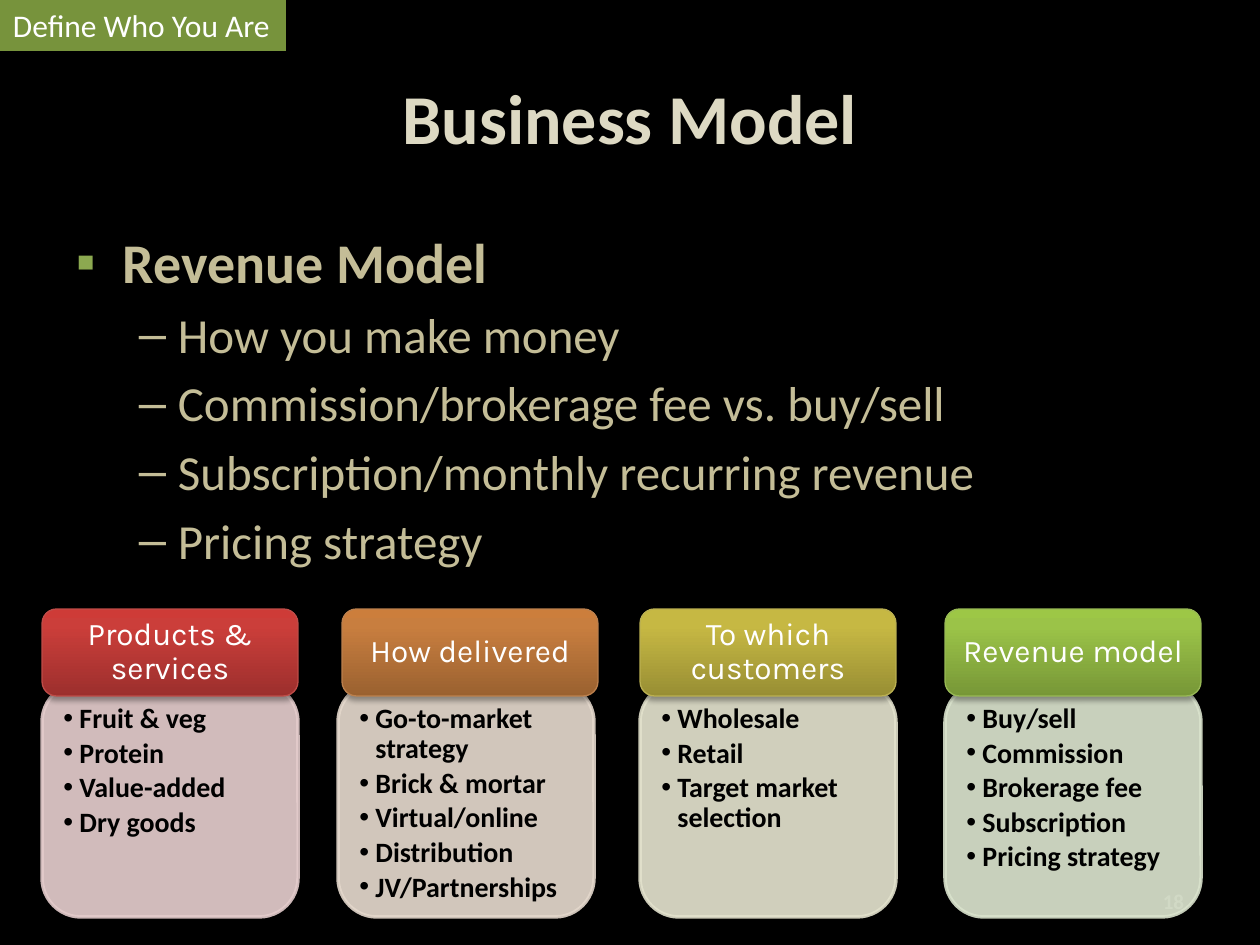
"""Build the Business Model slide with its four summary cards."""
from lxml import etree
from pptx import Presentation
from pptx.dml.color import RGBColor
from pptx.enum.shapes import MSO_SHAPE
from pptx.enum.text import MSO_ANCHOR, PP_ALIGN
from pptx.oxml import parse_xml
from pptx.oxml.ns import nsdecls, qn
from pptx.util import Emu, Pt

ROUNDED, RECTANGLE = MSO_SHAPE.ROUNDED_RECTANGLE, MSO_SHAPE.RECTANGLE
TOP, MIDDLE = MSO_ANCHOR.TOP, MSO_ANCHOR.MIDDLE
LEFT, CENTER, RIGHT = PP_ALIGN.LEFT, PP_ALIGN.CENTER, PP_ALIGN.RIGHT
SCALE = 914400 / 126

COLORS = {
    "background": "000000", "title": "DDD9C3", "body": "C4BD97",
    "bullet": "8CA950", "tag": "77933C", "white": "FFFFFF",
    "black": "000000", "number": "8C8C8C",
}
TAG = "Define Who You Are"
TITLE = "Business Model"
HEADING = "Revenue Model"
POINTS = [
    "How you make money",
    "Commission/brokerage fee vs. buy/sell",
    "Subscription/monthly recurring revenue",
    "Pricing strategy",
]
NUMBER = "18"
CARDS = [
    {"header": "Products & services", "header_x": 42, "panel_x": 42,
     "items": ["Fruit & veg", "Protein", "Value-added", "Dry goods"],
     "gradient": ("9C2F2D", "CB3E3A", "CE3B37"), "edge": "BF4C48",
     "panel": "E8D0D0", "panel_edge": "E3CBCB"},
    {"header": "How delivered", "header_x": 342, "panel_x": 338,
     "items": ["Go-to-market strategy", "Brick & mortar", "Virtual/online",
               "Distribution", "JV/Partnerships"],
     "gradient": ("9A6130", "C87E3F", "CC7E3C"), "edge": "BC804D",
     "panel": "E8DCD0", "panel_edge": "E3D7CB"},
    {"header": "To which customers", "header_x": 640, "panel_x": 640,
     "items": ["Wholesale", "Retail", "Target market selection"],
     "gradient": ("988E34", "C6B843", "C9BB41"), "edge": "BBB051",
     "panel": "E7E6D1", "panel_edge": "E2E1CC"},
    {"header": "Revenue model", "header_x": 945, "panel_x": 945,
     "items": ["Buy/sell", "Commission", "Brokerage fee", "Subscription",
               "Pricing strategy"],
     "gradient": ("779737", "9BC348", "9DC746"), "edge": "98B955",
     "panel": "DEE7D1", "panel_edge": "D9E2CC"},
]
CARD_WIDTH = 256
HEADER_TOP, HEADER_HEIGHT = 609, 87
PANEL_TOP, PANEL_HEIGHT = 683, 234

TITLE_FONT = {"name": "Calibri", "size": Pt(40), "bold": True}
HEADING_FONT = {"name": "Calibri", "size": Pt(32), "bold": True}
POINT_FONT = {"name": "Calibri", "size": Pt(28), "bold": False}
TAG_FONT = {"name": "Calibri", "size": Pt(18)}
NUMBER_FONT = {"name": "Calibri", "size": Pt(12), "bold": True}
HEADER_FONT = {"name": "Karla", "size": Pt(18)}
ITEM_FONT = {"name": "Calibri", "size": Pt(16), "bold": True}
ITEM_SPACING = {"line_spacing": 0.9, "space_after": Pt(2.5)}


def px(value):
    return Emu(round(value * SCALE))


def apply(target, values):
    for name, value in values.items():
        setattr(target, name, value)


def set_frame(shape, anchor=TOP, margins=(13, 6, 13, 6), wrap=True):
    sides = ("margin_left", "margin_top", "margin_right", "margin_bottom")
    apply(shape.text_frame, dict(zip(sides, map(px, margins))))
    apply(shape.text_frame, {"vertical_anchor": anchor, "word_wrap": wrap})


def write(paragraph, text, font, color, **layout):
    run = paragraph.add_run()
    run.text = text
    apply(run.font, font)
    run.font.color.rgb = RGBColor.from_string(color)
    apply(paragraph, {"alignment": LEFT, **layout})


def add_bullet(paragraph, symbol, margin, hanging, color=None):
    properties = paragraph._p.get_or_add_pPr()
    properties.set("marL", str(px(margin)))
    properties.set("indent", str(-px(hanging)))
    if color:
        holder = etree.SubElement(properties, qn("a:buClr"))
        etree.SubElement(holder, qn("a:srgbClr"), val=color)
    etree.SubElement(properties, qn("a:buFont"), typeface="Arial")
    etree.SubElement(properties, qn("a:buChar"), char=symbol)


def add_text_box(slide, box, text, font, color, alignment, anchor=MIDDLE):
    shape = slide.shapes.add_textbox(*map(px, box))
    set_frame(shape, anchor)
    write(shape.text_frame.paragraphs[0], text, font, color,
          alignment=alignment)
    return shape


def add_block(slide, kind, box, fill, edge=None, width=0):
    shape = slide.shapes.add_shape(kind, *map(px, box))
    shape.shadow.inherit = False
    shape.fill.solid()
    shape.fill.fore_color.rgb = RGBColor.from_string(fill)
    if edge:
        shape.line.color.rgb = RGBColor.from_string(edge)
        shape.line.width = Pt(width)
    else:
        shape.line.fill.background()
    return shape


def add_shadow(shape):
    effects = shape._element.spPr.find(qn("a:effectLst"))
    effects.append(parse_xml(
        f'<a:outerShdw {nsdecls("a")} blurRad="40000" dist="23000" '
        'dir="5400000" rotWithShape="0"><a:srgbClr val="000000">'
        '<a:alpha val="35000"/></a:srgbClr></a:outerShdw>'))


def set_gradient(shape, colors):
    stops = "".join(
        f'<a:gs pos="{position}"><a:srgbClr val="{color}"/></a:gs>'
        for position, color in zip((0, 80000, 100000), colors))
    properties = shape._element.spPr
    properties.replace(properties.find(qn("a:solidFill")), parse_xml(
        f'<a:gradFill {nsdecls("a")} rotWithShape="1"><a:gsLst>{stops}'
        '</a:gsLst><a:lin ang="16200000" scaled="0"/></a:gradFill>'))


def add_card(slide, card):
    panel = add_block(
        slide, ROUNDED, (card["panel_x"], PANEL_TOP, CARD_WIDTH, PANEL_HEIGHT),
        card["panel"], card["panel_edge"], 2)
    for color in panel._element.spPr.iter(qn("a:srgbClr")):
        etree.SubElement(color, qn("a:alpha"), val="90000")
    add_shadow(panel)
    set_frame(panel, TOP, (10, 10, 14, 15))
    frame = panel.text_frame
    for index, item in enumerate(card["items"]):
        paragraph = frame.add_paragraph() if index else frame.paragraphs[0]
        write(paragraph, item, ITEM_FONT, COLORS["black"], **ITEM_SPACING)
        add_bullet(paragraph, "•", 16, 16)

    header = add_block(
        slide, ROUNDED,
        (card["header_x"], HEADER_TOP, CARD_WIDTH, HEADER_HEIGHT),
        card["gradient"][0], card["edge"], 0.75)
    set_gradient(header, card["gradient"])
    add_shadow(header)
    set_frame(header, MIDDLE, (14, 8, 14, 8))
    write(header.text_frame.paragraphs[0], card["header"], HEADER_FONT,
          COLORS["white"], alignment=CENTER, line_spacing=0.9)


def main():
    presentation = Presentation()
    apply(presentation, {"slide_width": px(1260), "slide_height": px(945)})
    slide = presentation.slides.add_slide(presentation.slide_layouts[6])
    background = slide.background.fill
    background.solid()
    background.fore_color.rgb = RGBColor.from_string(COLORS["background"])

    add_text_box(slide, (63, 38, 1134, 158), TITLE, TITLE_FONT,
                 COLORS["title"], CENTER)
    body = add_text_box(slide, (63, 221, 1134, 624), HEADING, HEADING_FONT,
                        COLORS["body"], LEFT, TOP)
    heading = body.text_frame.paragraphs[0]
    heading.space_before = Pt(6.4)
    add_bullet(heading, "▪", 47, 47, COLORS["bullet"])
    for point in POINTS:
        paragraph = body.text_frame.add_paragraph()
        write(paragraph, point, POINT_FONT, COLORS["body"],
              level=1, space_before=Pt(5.6))
        add_bullet(paragraph, "–", 102, 39)

    tag = add_block(slide, RECTANGLE, (0, 0, 286, 51), COLORS["tag"])
    set_frame(tag, wrap=False)
    write(tag.text_frame.paragraphs[0], TAG, TAG_FONT, COLORS["white"])
    add_text_box(slide, (903, 876, 294, 50), NUMBER, NUMBER_FONT,
                 COLORS["number"], RIGHT)
    for card in CARDS:
        add_card(slide, card)
    presentation.save("out.pptx")


if __name__ == "__main__":
    main()
